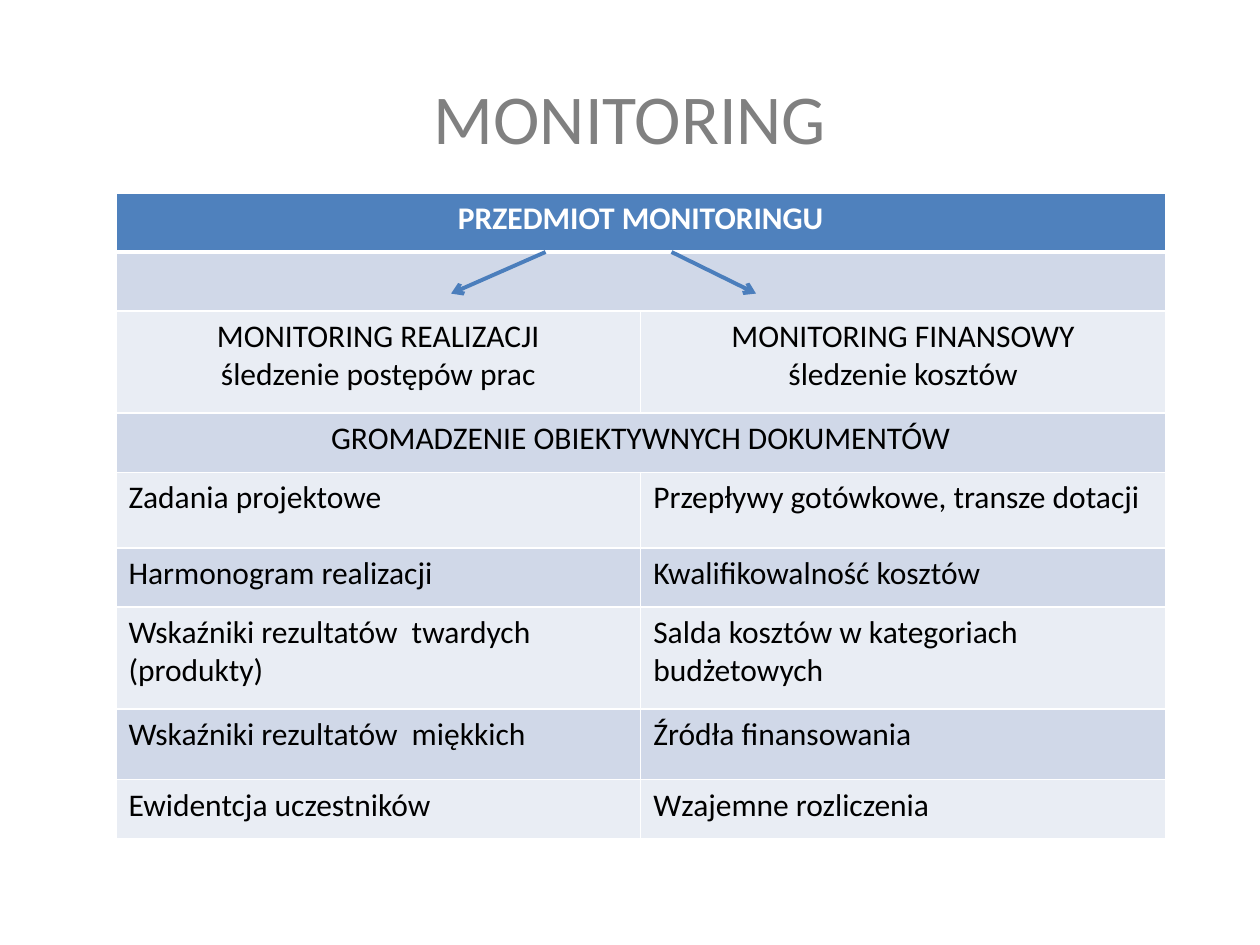
from lxml import etree
from pptx import Presentation
from pptx.dml.color import RGBColor
from pptx.enum import shapes, text
from pptx.oxml import ns
from pptx.util import Inches, Pt

FONT = "Calibri"
COLORS = {
    "title": "808080",
    "header": "4F81BD",
    "dark_band": "D0D8E8",
    "light_band": "E9EDF4",
    "white": "FFFFFF",
    "black": "000000",
    "arrow": "4B7EBC",
}
ROW_HEIGHTS = [0.47, 0.47, 0.81, 0.47, 0.6, 0.47, 0.81, 0.56, 0.47]
ROWS = [
    ["PRZEDMIOT MONITORINGU"],
    [""],
    ["MONITORING REALIZACJI\nśledzenie postępów prac", "MONITORING FINANSOWY\nśledzenie kosztów"],
    ["GROMADZENIE OBIEKTYWNYCH DOKUMENTÓW"],
    ["Zadania projektowe", "Przepływy gotówkowe, transze dotacji"],
    ["Harmonogram realizacji", "Kwalifikowalność kosztów"],
    ["Wskaźniki rezultatów  twardych (produkty)", "Salda kosztów w kategoriach budżetowych"],
    ["Wskaźniki rezultatów  miękkich", "Źródła finansowania"],
    ["Ewidentcja uczestników", "Wzajemne rozliczenia"],
]
CENTERED_ROWS = 4


def rgb(name):
    return RGBColor.from_string(COLORS[name])


def style_text(tf, size, color, align, bold=False):
    for p in tf.paragraphs:
        p.alignment = align
        p.font.size = Pt(size)
        for r in p.runs:
            r.font.name = FONT
            r.font.size = Pt(size)
            r.font.bold = bold
            r.font.color.rgb = rgb(color)


def add_title(s, left, top, width, height):
    tf = s.shapes.add_textbox(Inches(left), Inches(top), Inches(width), Inches(height)).text_frame
    tf.word_wrap = True
    tf.vertical_anchor = text.MSO_ANCHOR.MIDDLE
    tf.text = "MONITORING"
    style_text(tf, 40, "title", text.PP_ALIGN.CENTER)


def set_borders(cell, top, bottom):
    tc_pr = cell._tc.get_or_add_tcPr()
    for side, width in {"lnL": 1, "lnR": 1, "lnT": top, "lnB": bottom}.items():
        ln = etree.SubElement(tc_pr, ns.qn(f"a:{side}"), w=str(Pt(width)))
        fill = etree.SubElement(ln, ns.qn("a:solidFill"))
        etree.SubElement(fill, ns.qn("a:srgbClr"), val=COLORS["white"])


def add_monitoring_table(s, left, top, width):
    frame = s.shapes.add_table(len(ROWS), 2, Inches(left), Inches(top),
                               Inches(width), Inches(sum(ROW_HEIGHTS)))
    table = frame.table
    for i, (height, labels) in enumerate(zip(ROW_HEIGHTS, ROWS)):
        table.rows[i].height = Inches(height)
        header = i == 0
        band = "header" if header else "dark_band" if i % 2 else "light_band"
        for j in range(2):
            cell = table.cell(i, j)
            set_borders(cell, 3 if i == 1 else 1, 3 if header else 1)
            cell.fill.solid()
            cell.fill.fore_color.rgb = rgb(band)
        if len(labels) == 1:
            table.cell(i, 0).merge(table.cell(i, 1))
        align = text.PP_ALIGN.CENTER if i < CENTERED_ROWS else text.PP_ALIGN.LEFT
        for j, label in enumerate(labels):
            tf = table.cell(i, j).text_frame
            tf.text = label
            style_text(tf, 18, "white" if header else "black", align, header)


def add_arrows(s, left, top, height, spans):
    for start, end in spans:
        line = s.shapes.add_connector(
            shapes.MSO_CONNECTOR.STRAIGHT, Inches(left + start), Inches(top),
            Inches(left + end), Inches(top + height))
        line.line.color.rgb = rgb("arrow")
        line.line.width = Pt(2.25)
        etree.SubElement(line.line._get_or_add_ln(), ns.qn("a:tailEnd"), type="arrow")
        etree.SubElement(line._element.spPr, ns.qn("a:effectLst"))


def main():
    prs = Presentation()
    prs.slide_width, prs.slide_height = Inches(10), Inches(7.5)
    s = prs.slides.add_slide(prs.slide_layouts[6])
    add_title(s, 0.5, 0.3, 9, 1.25)
    add_monitoring_table(s, 0.92, 1.53, 8.33)
    add_arrows(s, 3.58, 2, 0.33, [(0.75, 0), (1.75, 2.42)])
    prs.save("out.pptx")


if __name__ == "__main__":
    main()
